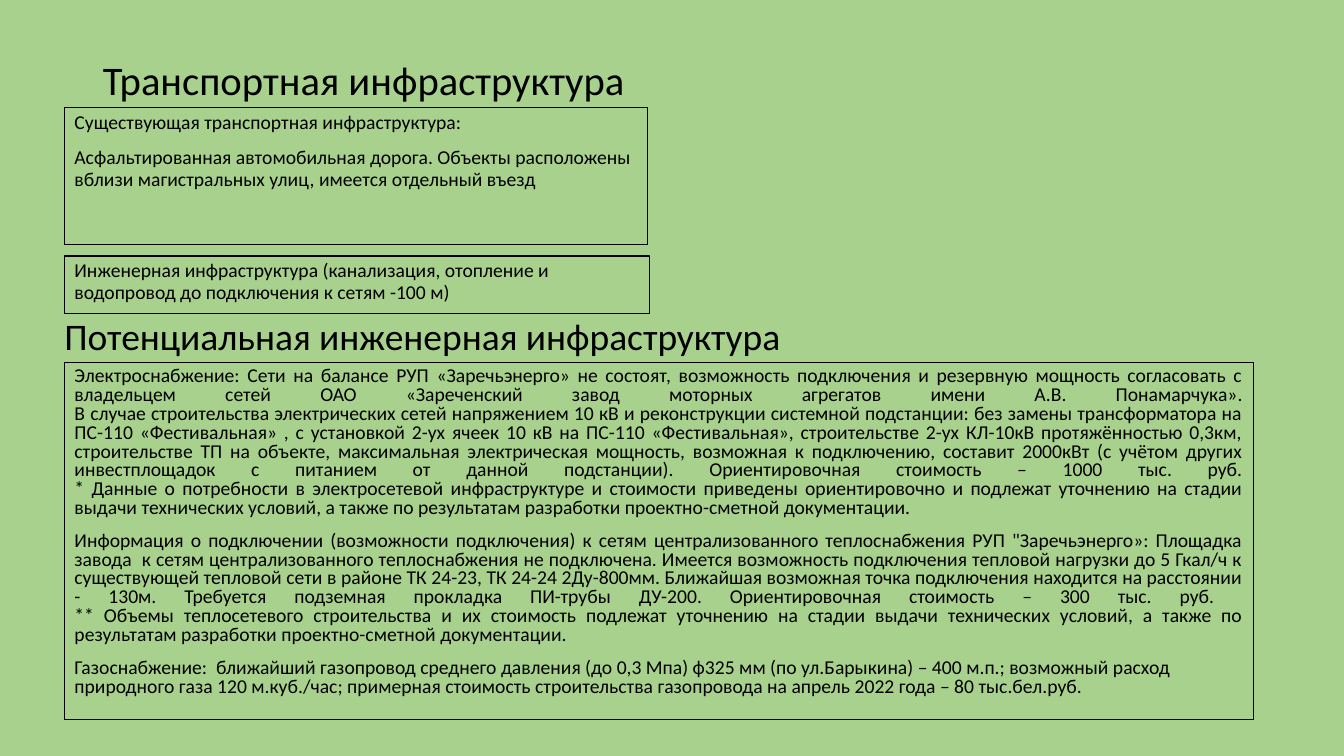
"""Build the slide on transport and engineering infrastructure."""
import pptx
import pptx.dml.color
import pptx.enum.shapes
import pptx.enum.text
import pptx.util
import lxml.etree

GREEN = pptx.dml.color.RGBColor(0xA9, 0xD1, 0x8E)
BLACK = pptx.dml.color.RGBColor(0, 0, 0)
ALIGN = pptx.enum.text.PP_ALIGN
ANCHOR = pptx.enum.text.MSO_ANCHOR
WIDTH, HEIGHT = 13.33, 7.5
LEFT = 0.64
HEADING_WIDTH, HEADING_HEIGHT = 11.5, 0.84
BODY_SIZE = 14

ROAD = [
    "Существующая транспортная инфраструктура:",
    "Асфальтированная автомобильная дорога. Объекты расположены вблизи магистральных улиц, имеется отдельный въезд",
]
UTILITIES = ["Инженерная инфраструктура (канализация, отопление и водопровод до подключения к сетям -100 м)"]
ELECTRICITY = [
    "Электроснабжение: Сети на балансе РУП «Заречьэнерго» не состоят, возможность подключения и резервную "
    "мощность согласовать с владельцем сетей ОАО «Зареченский завод моторных агрегатов имени А.В. Понамарчука».",
    "В случае строительства электрических сетей напряжением 10 кВ и реконструкции системной подстанции: "
    "без замены трансформатора на ПС-110 «Фестивальная» , с установкой 2-ух ячеек 10 кВ на ПС-110 "
    "«Фестивальная», строительстве 2-ух КЛ-10кВ протяжённостью 0,3км, строительстве ТП на объекте, "
    "максимальная электрическая мощность, возможная к подключению, составит 2000кВт (с учётом других "
    "инвестплощадок с питанием от данной подстанции). Ориентировочная стоимость – 1000 тыс. руб.",
    "* Данные о потребности в электросетевой инфраструктуре и стоимости приведены ориентировочно и подлежат "
    "уточнению на стадии выдачи технических условий, а также по результатам разработки проектно-сметной "
    "документации.",
]
HEATING = [
    "Информация о подключении (возможности подключения) к сетям централизованного теплоснабжения РУП "
    "\"Заречьэнерго»: Площадка завода  к сетям централизованного теплоснабжения не подключена. Имеется "
    "возможность подключения тепловой нагрузки до 5 Гкал/ч к существующей тепловой сети в районе ТК 24-23, "
    "ТК 24-24 2Ду-800мм. Ближайшая возможная точка подключения находится на расстоянии - 130м. Требуется "
    "подземная прокладка ПИ-трубы ДУ-200. Ориентировочная стоимость – 300 тыс. руб. ",
    "** Объемы теплосетевого строительства и их стоимость подлежат уточнению на стадии выдачи технических "
    "условий, а также по результатам разработки проектно-сметной документации. ",
]
GAS = [
    "Газоснабжение:  ближайший газопровод среднего давления (до 0,3 Мпа) ф325 мм (по ул.Барыкина) – 400 м.п.; "
    "возможный расход природного газа 120 м.куб./час; примерная стоимость строительства газопровода на апрель "
    "2022 года – 80 тыс.бел.руб.",
]
POTENTIAL = ["\n".join(lines) for lines in (ELECTRICITY, HEATING, GAS)]


def inches(*lengths):
    return [pptx.util.Inches(length) for length in lengths]


def write(box, texts, size, spacing, before, anchor, justified=0):
    frame = box.text_frame
    frame.word_wrap = True
    frame.auto_size = pptx.enum.text.MSO_AUTO_SIZE.NONE
    frame.vertical_anchor = anchor
    for index, text in enumerate(texts):
        para = frame.add_paragraph() if index else frame.paragraphs[0]
        para.text = text
        para.alignment = ALIGN.JUSTIFY if index < justified else ALIGN.LEFT
        para.line_spacing = spacing
        para.space_before = pptx.util.Pt(before)
        for span in para.runs:
            span.font.name = "Calibri"
            span.font.size = pptx.util.Pt(size)
            span.font.color.rgb = BLACK
        for line_break in para._p.findall("{*}br"):
            namespace = lxml.etree.QName(line_break).namespace
            lxml.etree.SubElement(line_break, f"{{{namespace}}}rPr", sz=str(size * 100))


deck = pptx.Presentation()
deck.slide_width, deck.slide_height = inches(WIDTH, HEIGHT)
page = deck.slides.add_slide(deck.slide_layouts[5])
page.background.fill.solid()
page.background.fill.fore_color.rgb = GREEN

title = page.shapes.title
title.left, title.top, title.width, title.height = inches(0.92, 0.4, HEADING_WIDTH, HEADING_HEIGHT)
write(title, ["Транспортная инфраструктура"], 29, 0.9, 0, ANCHOR.MIDDLE)

subtitle = page.shapes.add_textbox(*inches(0.54, 2.76, HEADING_WIDTH, HEADING_HEIGHT))
write(subtitle, ["Потенциальная инженерная инфраструктура"], 26.8, 0.8, 0, ANCHOR.BOTTOM)

for texts, top, width, height, spacing, justified in [
    (ROAD, 1.07, 5.78, 1.36, 0.9, 0),
    (UTILITIES, 2.54, 5.8, 0.57, 0.9, 0),
    (POTENTIAL, 3.6, 11.79, 3.54, 0.8, 2),
]:
    box = page.shapes.add_shape(
        pptx.enum.shapes.MSO_SHAPE.RECTANGLE, *inches(LEFT, top, width, height)
    )
    box.shadow.inherit = False
    box.fill.background()
    box.line.color.rgb = BLACK
    box.line.width = pptx.util.Pt(0.75)
    write(box, texts, BODY_SIZE, spacing, 10, ANCHOR.TOP, justified)

deck.save("out.pptx")
